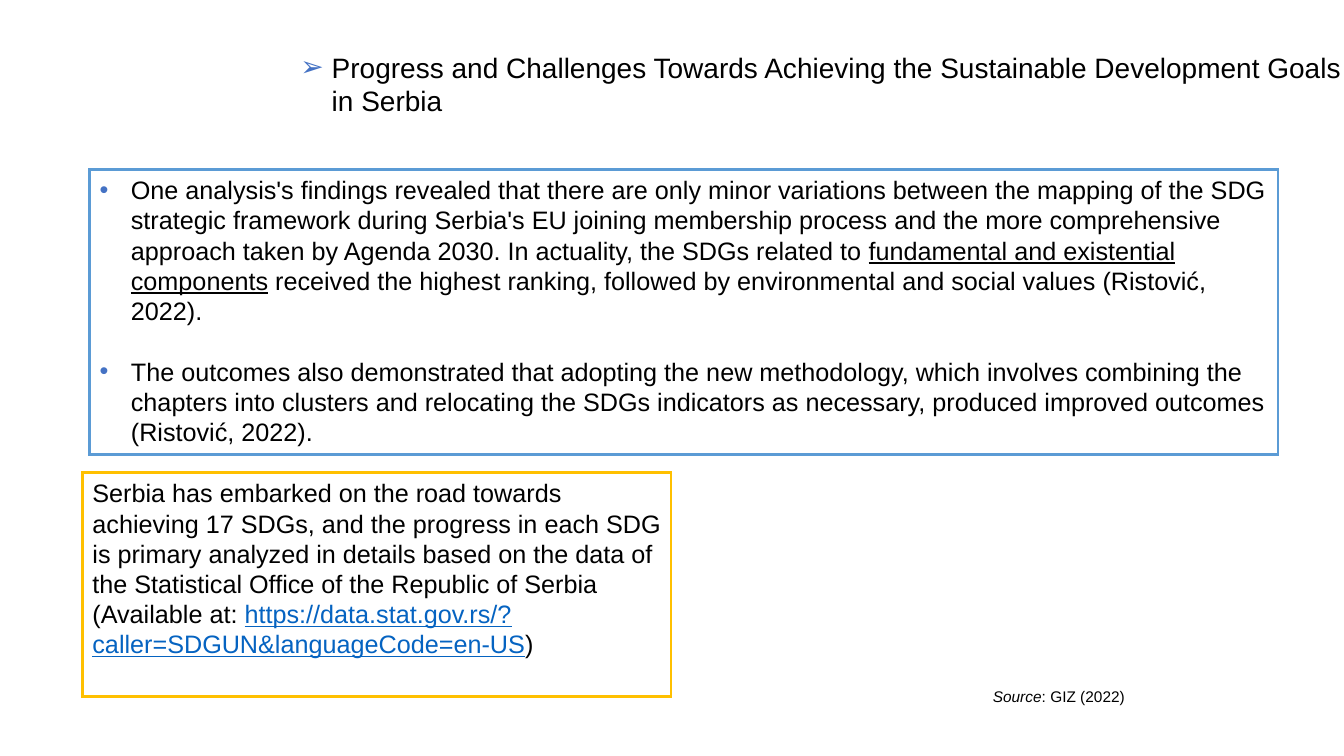
from lxml import etree
from pptx import Presentation
from pptx.dml.color import RGBColor
from pptx.enum.shapes import MSO_SHAPE
from pptx.enum.text import MSO_ANCHOR, PP_ALIGN
from pptx.oxml.ns import qn
from pptx.util import Cm, Pt

RECTANGLE = MSO_SHAPE.RECTANGLE
TOP = MSO_ANCHOR.TOP
LEFT = PP_ALIGN.LEFT

COLORS = {
    "text": "000000",
    "link": "0563C1",
    "bullet": "4472C4",
    "box": "FFFFFF",
    "findings": "5B9BD5",
    "data": "FFC000",
}
FONT = "Arial"
BULLET_INDENT = Cm(0.79)
PARAGRAPH_GAP = Pt(21.6)

TITLE = [[("Progress and Challenges Towards Achieving the Sustainable "
           "Development Goals in Serbia", "")]]
FINDINGS = [
    [("One analysis's findings revealed that there are only minor variations "
      "between the mapping of the SDG strategic framework during Serbia's EU "
      "joining membership process and the more comprehensive approach taken by "
      "Agenda 2030. In actuality, the SDGs related to ", ""),
     ("fundamental and existential components", "underline"),
     (" received the highest ranking, followed by environmental and social "
      "values (Ristović, 2022).", "")],
    [("The outcomes also demonstrated that adopting the new methodology, which "
      "involves combining the chapters into clusters and relocating the SDGs "
      "indicators as necessary, produced improved outcomes (Ristović, 2022).", "")],
]
DATA = [
    [("Serbia has embarked on the road towards achieving 17 SDGs, and the "
      "progress in each SDG is primary analyzed in details based on the data of "
      "the Statistical Office of the Republic of Serbia (Available at: ", ""),
     ("https://data.stat.gov.rs/?caller=SDGUN&languageCode=en-US", "link"),
     (")", "")],
]
SOURCE = [[("Source", "italic"), (": GIZ (2022)", "")]]


def color(name):
    return RGBColor.from_string(COLORS[name])


def add_bullet(paragraph, character):
    properties = paragraph._p.get_or_add_pPr()
    properties.set("marL", str(BULLET_INDENT))
    properties.set("indent", str(-BULLET_INDENT))
    bullet_color = etree.SubElement(properties, qn("a:buClr"))
    etree.SubElement(bullet_color, qn("a:srgbClr"), val=COLORS["bullet"])
    etree.SubElement(properties, qn("a:buFont"), typeface=FONT)
    etree.SubElement(properties, qn("a:buChar"), char=character)


def write_paragraphs(shape, paragraphs, size, bullet=None):
    """Fill a shape with paragraphs, each a list of (text, style) runs."""
    frame = shape.text_frame
    frame.word_wrap = True
    frame.vertical_anchor = TOP
    for index, runs in enumerate(paragraphs):
        paragraph = frame.add_paragraph() if index else frame.paragraphs[0]
        paragraph.alignment = LEFT
        if index:
            paragraph.space_before = PARAGRAPH_GAP
        if bullet:
            add_bullet(paragraph, bullet)
        for text, style in runs:
            run = paragraph.add_run()
            run.text = text
            run.font.name = FONT
            run.font.size = Pt(size)
            run.font.color.rgb = color("link" if style == "link" else "text")
            if style in ("link", "underline"):
                run.font.underline = True
            if style == "italic":
                run.font.italic = True


def add_framed_box(slide, position, line, paragraphs, bullet=None):
    shape = slide.shapes.add_shape(RECTANGLE, *map(Cm, position))
    shape.shadow.inherit = False
    shape.fill.solid()
    shape.fill.fore_color.rgb = color("box")
    shape.line.color.rgb = color(line)
    shape.line.width = Pt(2)
    outline = shape._element.spPr.find(qn("a:ln"))
    etree.SubElement(outline, qn("a:miter"), lim="800000")
    write_paragraphs(shape, paragraphs, 18, bullet)


def add_label(slide, position, paragraphs, size, bullet=None):
    label = slide.shapes.add_textbox(*map(Cm, position))
    write_paragraphs(label, paragraphs, size, bullet)


def main():
    presentation = Presentation()
    presentation.slide_width = Cm(33.87)
    presentation.slide_height = Cm(19.05)
    slide = presentation.slides.add_slide(presentation.slide_layouts[6])
    add_framed_box(slide, (2.08, 11.91, 14.83, 5.64), "data", DATA)
    add_framed_box(slide, (2.26, 4.27, 29.95, 7.19), "findings", FINDINGS, "•")
    add_label(slide, (24.77, 17.2, 6.65, 0.74), SOURCE, 11)
    add_label(slide, (7.32, 1.14, 26.85, 1.96), TITLE, 20, "➢")
    presentation.save("out.pptx")


if __name__ == "__main__":
    main()
